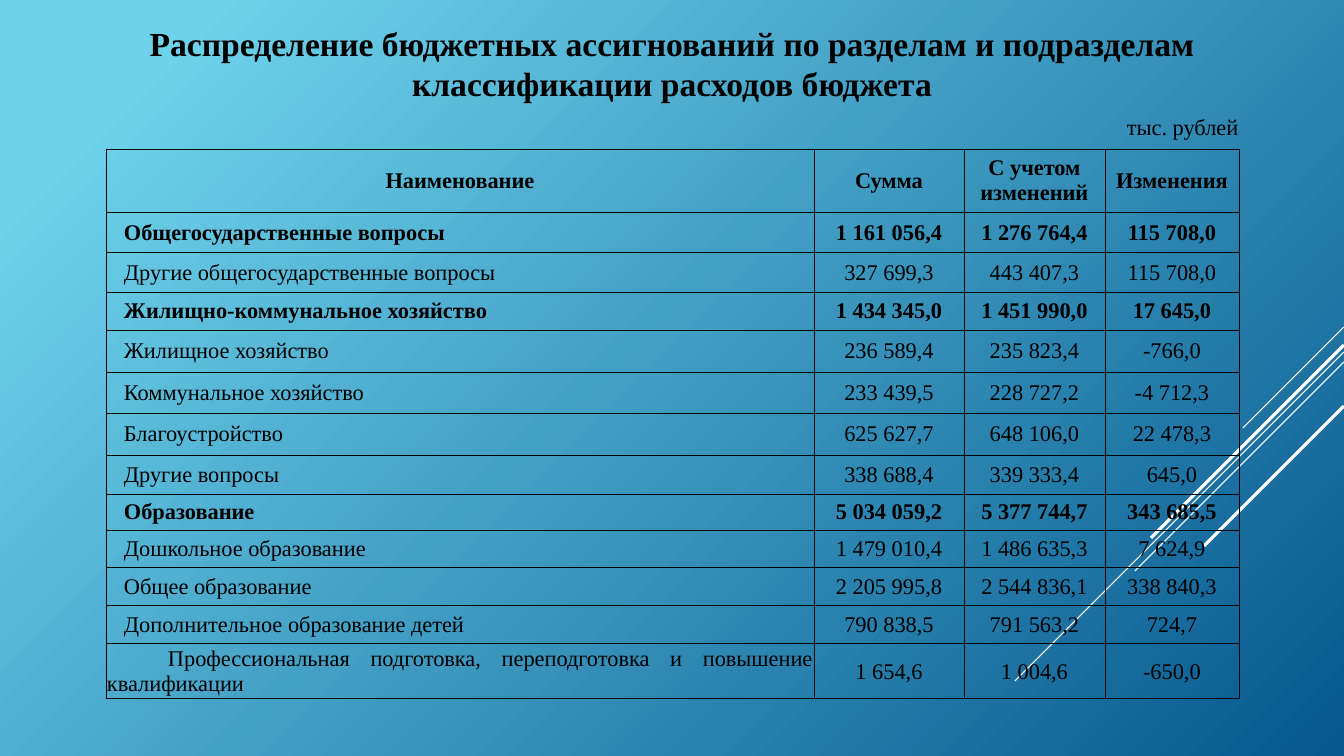
from lxml import etree
from pptx import Presentation, util as u
from pptx.dml.color import RGBColor
from pptx.enum import shapes, text
from pptx.oxml.ns import qn

COLORS = {"ink": "000000", "line": "FFFFFF", "sky": "6ED2EB", "deep": "06588E"}
PX = 12192000 / 1344
ALIGN = text.PP_ALIGN

HEAD = ["Наименование", "Сумма", "С учетом изменений", "Изменения"]
ROWS = [
    ("Общегосударственные вопросы", "1 161 056,4", "1 276 764,4", "115 708,0"),
    ("Другие общегосударственные вопросы", "327 699,3", "443 407,3", "115 708,0"),
    ("Жилищно-коммунальное хозяйство", "1 434 345,0", "1 451 990,0", "17 645,0"),
    ("Жилищное хозяйство", "236 589,4", "235 823,4", "-766,0"),
    ("Коммунальное хозяйство", "233 439,5", "228 727,2", "-4 712,3"),
    ("Благоустройство", "625 627,7", "648 106,0", "22 478,3"),
    ("Другие вопросы", "338 688,4", "339 333,4", "645,0"),
    ("Образование", "5 034 059,2", "5 377 744,7", "343 685,5"),
    ("Дошкольное образование", "1 479 010,4", "1 486 635,3", "7 624,9"),
    ("Общее образование", "2 205 995,8", "2 544 836,1", "338 840,3"),
    ("Дополнительное образование детей", "790 838,5", "791 563,2", "724,7"),
    ("Профессиональная подготовка, переподготовка и повышение квалификации",
     "1 654,6", "1 004,6", "-650,0"),
]
BOLD = {0, 1, 3, 8}
WIDTHS = [708, 150, 141, 134]
HEIGHTS = [63, 40, 40, 38, 42, 41, 42, 39, 36, 38, 38, 38, 54]
RAYS = [(327, 101, 0.75), (352, 329, 0.75), (362, 209, 0.75),
        (345, 193, 2.25), (406, 140, 2.25)]


def px(n):
    return u.Emu(round(n * PX))


def rgb(name):
    return RGBColor.from_string(COLORS[name])


class Deck:
    """Holds the style and the current slide."""

    def __init__(self, font):
        self.font = font
        self.prs = Presentation()
        self.prs.slide_width, self.prs.slide_height = px(1344), px(756)
        self.slide = self.prs.slides.add_slide(self.prs.slide_layouts[6])

    def back(self, start, end):
        fill = self.slide.background.fill
        fill.gradient()
        fill.gradient_angle = 315
        for stop, name, pos in zip(fill.gradient_stops, (start, end), (0.1, 1)):
            stop.color.rgb = rgb(name)
            stop.position = pos

    def ray(self, top, size, width):
        line = self.slide.shapes.add_connector(
            shapes.MSO_CONNECTOR.STRAIGHT,
            px(1344), px(top), px(1344 - size), px(top + size))
        line.line.color.rgb = rgb("line")
        line.line.width = u.Pt(width)
        etree.SubElement(line._element.spPr, qn("a:effectLst"))

    def put(self, frame, words, size, bold, align):
        para = frame.paragraphs[0]
        para.alignment = align
        run = para.add_run()
        run.text = words
        run.font.name = self.font
        run.font.size = u.Pt(size)
        run.font.bold = bold
        run.font.color.rgb = rgb("ink")
        return para

    def label(self, box, words, size, bold, align):
        frame = self.slide.shapes.add_textbox(*map(px, box)).text_frame
        frame.word_wrap = True
        self.put(frame, words, size, bold, align)

    def border(self, cell):
        props = cell._tc.get_or_add_tcPr()
        for side in ("lnL", "lnR", "lnT", "lnB"):
            edge = etree.SubElement(props, qn("a:" + side), w=str(u.Pt(0.5)))
            fill = etree.SubElement(edge, qn("a:solidFill"))
            etree.SubElement(fill, qn("a:srgbClr"), val=COLORS["ink"])

    def cell(self, cell, words, bold, name, pad):
        self.border(cell)
        cell.fill.background()
        cell.vertical_anchor = text.MSO_ANCHOR.MIDDLE
        cell.margin_left = cell.margin_right = cell.margin_top = px(pad)
        cell.margin_bottom = 0
        align = ALIGN.JUSTIFY if name else ALIGN.CENTER
        para = self.put(cell.text_frame, words, 16, bold, align)
        if name:
            inset = 61 if len(words) > 60 else 17
            para._p.get_or_add_pPr().set("indent", str(px(inset)))

    def table(self, left, top, rows):
        grid = self.slide.shapes.add_table(
            len(rows), len(WIDTHS), px(left), px(top),
            px(sum(WIDTHS)), px(sum(HEIGHTS))).table
        grid.first_row = grid.horz_banding = False
        for col, width in zip(grid.columns, WIDTHS):
            col.width = px(width)
        for r, row in enumerate(rows):
            grid.rows[r].height = px(HEIGHTS[r])
            for c, words in enumerate(row):
                self.cell(grid.cell(r, c), words, r in BOLD,
                          r > 0 and c == 0, min(r, 1))


def main():
    deck = Deck("Times New Roman")
    deck.back("sky", "deep")
    for ray in RAYS:
        deck.ray(*ray)
    deck.label((137, 18, 1070, 92),
               "Распределение бюджетных ассигнований по разделам и подразделам "
               "классификации расходов бюджета", 24, True, ALIGN.CENTER)
    deck.label((1117, 108, 166, 37), "тыс. рублей", 16, False, ALIGN.LEFT)
    deck.table(106, 149, [HEAD] + ROWS)
    deck.prs.save("out.pptx")


if __name__ == "__main__":
    main()
